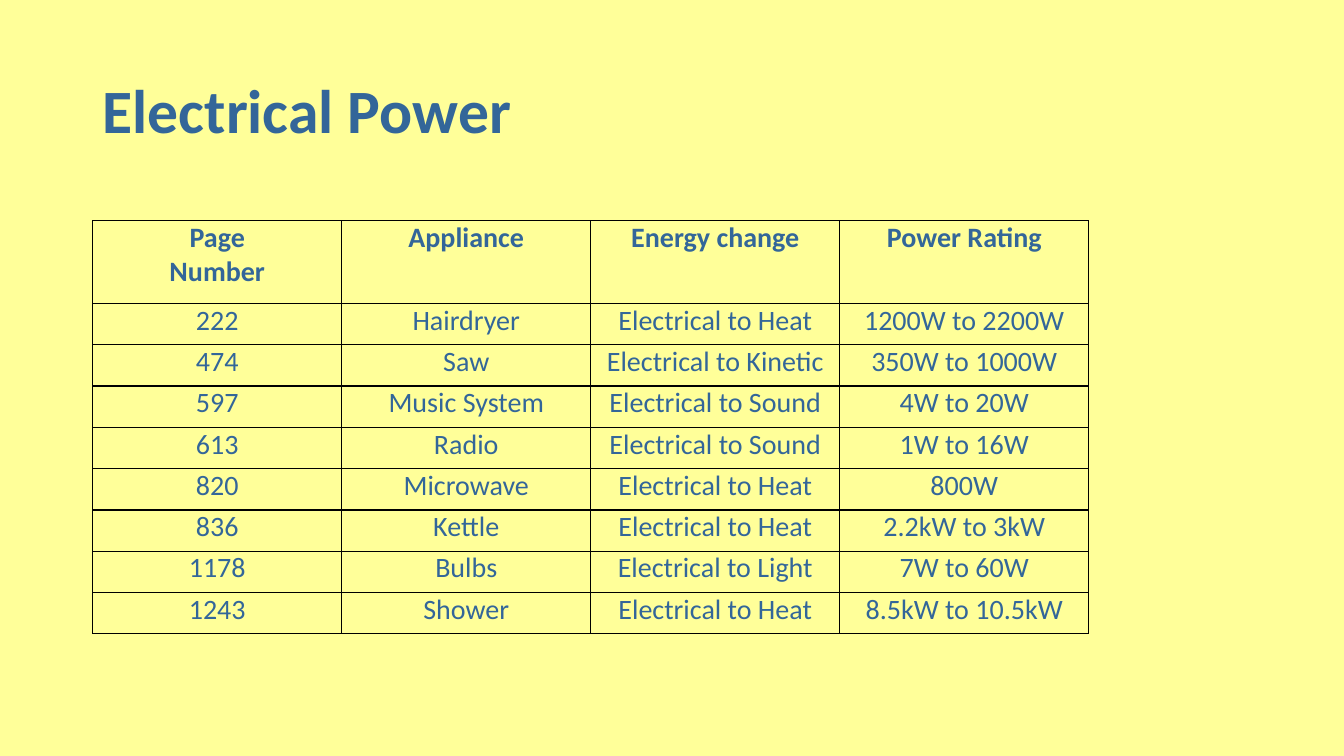
"""Build the Electrical Power slide: a title above a table of appliances."""
from lxml.etree import SubElement
from pptx import Presentation
from pptx.dml.color import RGBColor
from pptx.enum.text import MSO_ANCHOR, MSO_AUTO_SIZE, PP_ALIGN
from pptx.oxml.ns import qn
from pptx.util import Inches, Pt

TITLE = "Electrical Power"
ROWS = [
    ("Page\nNumber", "Appliance", "Energy change", "Power Rating"),
    ("222", "Hairdryer", "Electrical to Heat", "1200W to 2200W"),
    ("474", "Saw", "Electrical to Kinetic", "350W to 1000W"),
    ("597", "Music System", "Electrical to Sound", "4W to 20W"),
    ("613", "Radio", "Electrical to Sound", "1W to 16W"),
    ("820", "Microwave", "Electrical to Heat", "800W"),
    ("836", "Kettle", "Electrical to Heat", "2.2kW to 3kW"),
    ("1178", "Bulbs", "Electrical to Light", "7W to 60W"),
    ("1243", "Shower", "Electrical to Heat", "8.5kW to 10.5kW"),
]
YELLOW, BLUE, BLACK = "FFFF99", "336699", "000000"
LEFT, TABLE_TOP = 0.92, 2.19
COLUMN, ROW = 2.47, 0.41
HEADER_ROWS = 2
CELL_FORMAT = {
    "margin_left": Inches(0.07),
    "margin_right": Inches(0.07),
    "margin_top": 0,
    "margin_bottom": 0,
    "vertical_anchor": MSO_ANCHOR.TOP,
}


def colour(value):
    return RGBColor.from_string(value)


def style_text(para, size, bold):
    para.font.color.rgb = colour(BLUE)
    for name, value in {"name": "Calibri", "size": Pt(size), "bold": bold}.items():
        setattr(para.font, name, value)


def add_borders(cell):
    properties = cell._tc.get_or_add_tcPr()
    for side in ("lnL", "lnR", "lnT", "lnB"):
        line = SubElement(properties, qn(f"a:{side}"), w=str(Pt(1)))
        fill = SubElement(line, qn("a:solidFill"))
        SubElement(fill, qn("a:srgbClr"), val=BLACK)


def add_title(page):
    title = page.shapes.title
    place = {"left": LEFT, "top": 0.4, "width": 11.5, "height": 1.45}
    for name, value in place.items():
        setattr(title, name, Inches(value))
    frame = title.text_frame
    frame.text = TITLE
    frame.word_wrap = True
    frame.auto_size = MSO_AUTO_SIZE.NONE
    frame.vertical_anchor = MSO_ANCHOR.MIDDLE
    para = frame.paragraphs[0]
    para.alignment = PP_ALIGN.LEFT
    para.line_spacing = 0.9
    style_text(para, 44, True)


def add_appliance_table(page):
    columns = len(ROWS[0])
    height = ROW * (len(ROWS) - 1 + HEADER_ROWS)
    table = page.shapes.add_table(
        len(ROWS), columns, Inches(LEFT), Inches(TABLE_TOP),
        Inches(COLUMN * columns), Inches(height)).table
    table.first_row = table.horz_banding = False
    for column in table.columns:
        column.width = Inches(COLUMN)
    for index, texts in enumerate(ROWS):
        is_header = index == 0
        table.rows[index].height = Inches(ROW * (HEADER_ROWS if is_header else 1))
        for cell, text in zip(table.rows[index].cells, texts):
            for name, value in CELL_FORMAT.items():
                setattr(cell, name, value)
            add_borders(cell)
            cell.fill.background()
            cell.text = text
            for para in cell.text_frame.paragraphs:
                para.alignment = PP_ALIGN.CENTER
                style_text(para, 20, is_header)


def main():
    deck = Presentation()
    deck.slide_width, deck.slide_height = Inches(13.33), Inches(7.5)
    page = deck.slides.add_slide(deck.slide_layouts[5])
    page.background.fill.solid()
    page.background.fill.fore_color.rgb = colour(YELLOW)
    add_title(page)
    add_appliance_table(page)
    deck.save("out.pptx")


if __name__ == "__main__":
    main()
